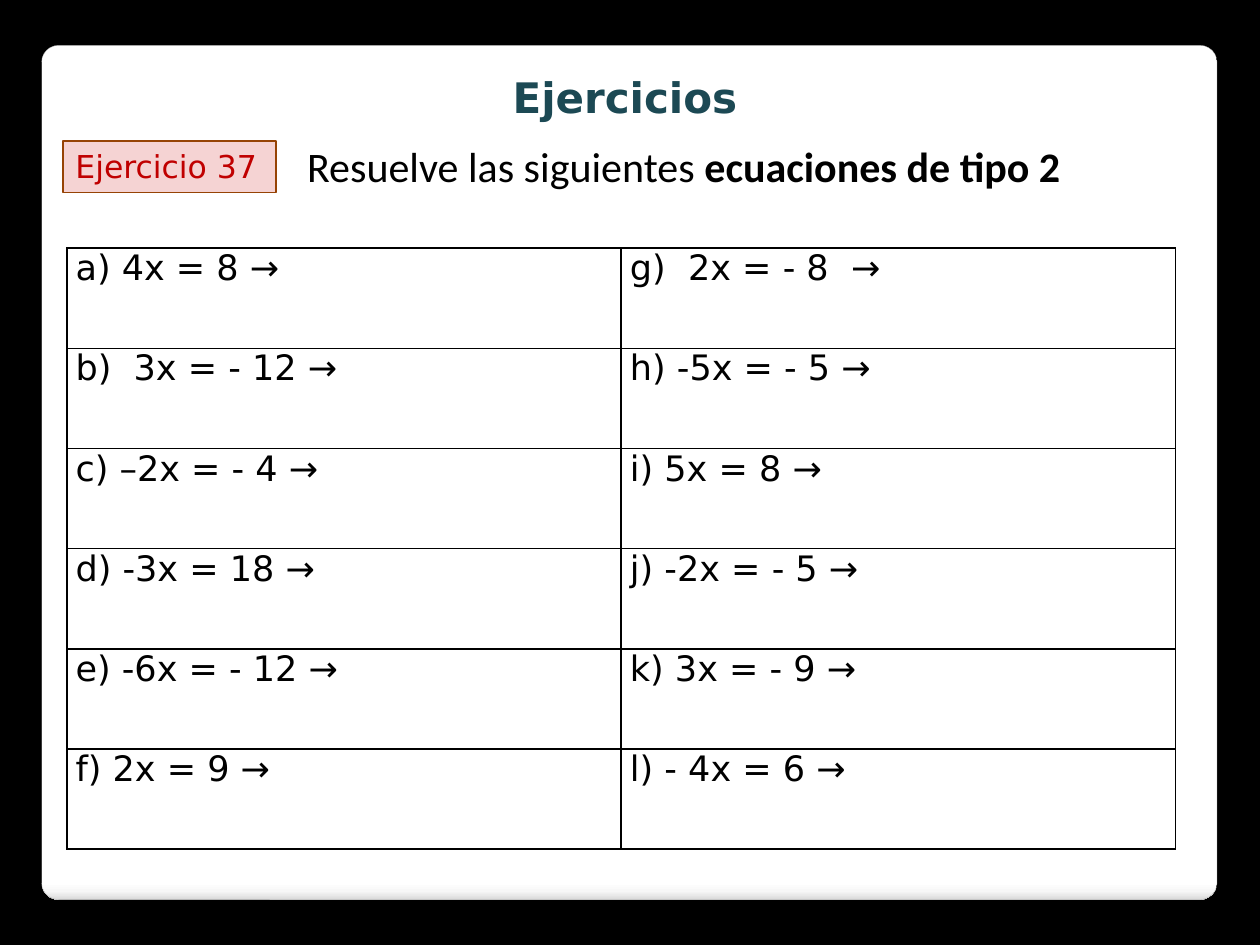
from pptx import Presentation
from pptx.dml.color import RGBColor
from pptx.enum.shapes import MSO_SHAPE
from pptx.enum.text import MSO_ANCHOR, MSO_AUTO_SIZE, PP_ALIGN
from pptx.oxml import parse_xml
from pptx.oxml.ns import nsdecls, qn
from pptx.util import Pt

THEME = {
    "background": "000000",
    "panel_stops": [(0, "FFFFFF"), (98, "FFFFFF"), (99, "F7F7F7"), (100, "DADADA")],
    "panel_line": "A4A4A4",
    "label_fill": "F5D3D3",
    "label_line": "964305",
    "border": "000000",
    "title": {"color": "1C4954", "format": {"name": "DejaVu Sans", "size": Pt(24), "bold": True}},
    "label": {"color": "C00000", "format": {"name": "DejaVu Sans", "size": Pt(18), "bold": False}},
    "task": {"color": "000000", "format": {"name": "Calibri", "size": Pt(24), "bold": False}},
    "strong": {"color": "000000", "format": {"name": "Calibri", "size": Pt(24), "bold": True}},
    "cell": {"color": "000000", "format": {"name": "DejaVu Sans", "size": Pt(20), "bold": False}},
}
FRAME_FORMAT = {
    "word_wrap": True,
    "auto_size": MSO_AUTO_SIZE.SHAPE_TO_FIT_TEXT,
    "vertical_anchor": MSO_ANCHOR.TOP,
    "margin_left": Pt(7.2),
    "margin_right": Pt(7.2),
    "margin_top": Pt(3.6),
    "margin_bottom": Pt(3.6),
}
CELL_FORMAT = {
    "margin_left": Pt(5.04),
    "margin_right": Pt(5.04),
    "margin_top": Pt(0),
    "margin_bottom": Pt(0),
    "vertical_anchor": MSO_ANCHOR.TOP,
}
EQUATIONS = [
    ("a) 4x = 8 →", "g)  2x = - 8  →"),
    ("b)  3x = - 12 →", "h) -5x = - 5 →"),
    ("c) –2x = - 4 →", "i) 5x = 8 →"),
    ("d) -3x = 18 →", "j) -2x = - 5 →"),
    ("e) -6x = - 12 →", "k) 3x = - 9 →"),
    ("f) 2x = 9 →", "l) - 4x = 6 →"),
]


def set_attributes(target, values):
    for name, value in values.items():
        setattr(target, name, value)


def add_text(paragraph, text, style):
    run = paragraph.add_run()
    run.text = text
    set_attributes(run.font, THEME[style]["format"])
    run.font.color.rgb = RGBColor.from_string(THEME[style]["color"])


presentation = Presentation()
presentation.slide_width = Pt(720)
presentation.slide_height = Pt(540)
slide = presentation.slides.add_slide(presentation.slide_layouts[5])
slide.background.fill.solid()
slide.background.fill.fore_color.rgb = RGBColor.from_string(THEME["background"])

title = slide.shapes.title
set_attributes(title, {"left": Pt(25.2), "top": Pt(37.44), "width": Pt(663.84), "height": Pt(36)})

panel = slide.shapes.add_shape(
    MSO_SHAPE.ROUNDED_RECTANGLE, Pt(23.76), Pt(25.92), Pt(671.76), Pt(488.16)
)
title.element.addprevious(panel.element)
panel.adjustments[0] = 0.02
panel.fill.gradient()
panel.fill.gradient_angle = 270
stops = "".join(
    f'<a:gs pos="{position * 1000}"><a:srgbClr val="{color}"/></a:gs>'
    for position, color in THEME["panel_stops"]
)
stop_list = panel.element.spPr.find(qn("a:gradFill")).find(qn("a:gsLst"))
stop_list.getparent().replace(
    stop_list, parse_xml(f'<a:gsLst {nsdecls("a")}>{stops}</a:gsLst>')
)
panel.line.color.rgb = RGBColor.from_string(THEME["panel_line"])
panel.line.width = Pt(0.16)
panel.shadow.inherit = False
panel.element.spPr.find(qn("a:effectLst")).append(parse_xml(
    f'<a:outerShdw {nsdecls("a")} blurRad="{Pt(6)}" dist="{Pt(4)}" dir="5400000">'
    '<a:srgbClr val="000000"><a:alpha val="25000"/></a:srgbClr></a:outerShdw>'
))

label = slide.shapes.add_shape(MSO_SHAPE.RECTANGLE, Pt(36), Pt(80.64), Pt(121.68), Pt(29.52))
label.shadow.inherit = False
label.fill.solid()
label.fill.fore_color.rgb = RGBColor.from_string(THEME["label_fill"])
label.line.color.rgb = RGBColor.from_string(THEME["label_line"])
label.line.width = Pt(0.75)

task = slide.shapes.add_textbox(Pt(168.48), Pt(77.04), Pt(514.08), Pt(36))

for shape, alignment, pieces in [
    (title, PP_ALIGN.CENTER, [("Ejercicios", "title")]),
    (label, PP_ALIGN.LEFT, [("Ejercicio 37", "label")]),
    (task, PP_ALIGN.LEFT, [
        ("Resuelve las siguientes ", "task"), ("ecuaciones de tipo 2", "strong")
    ]),
]:
    set_attributes(shape.text_frame, FRAME_FORMAT)
    paragraph = shape.text_frame.paragraphs[0]
    paragraph.alignment = alignment
    for text, style in pieces:
        add_text(paragraph, text, style)

table = slide.shapes.add_table(
    len(EQUATIONS), 2, Pt(38.16), Pt(141.84), Pt(633.6), Pt(343.44)
).table
set_attributes(table, {"first_row": False, "horz_banding": False})
for row, equations in zip(table.rows, EQUATIONS):
    for cell, equation in zip(row.cells, equations):
        set_attributes(cell, CELL_FORMAT)
        cell.fill.background()
        properties = cell._tc.get_or_add_tcPr()
        for index, side in enumerate(["lnL", "lnR", "lnT", "lnB"]):
            properties.insert(index, parse_xml(
                f'<a:{side} {nsdecls("a")} w="{Pt(1)}"><a:solidFill>'
                f'<a:srgbClr val="{THEME["border"]}"/></a:solidFill></a:{side}>'
            ))
        paragraph = cell.text_frame.paragraphs[0]
        paragraph.space_after = Pt(18)
        add_text(paragraph, equation, "cell")

presentation.save("out.pptx")
